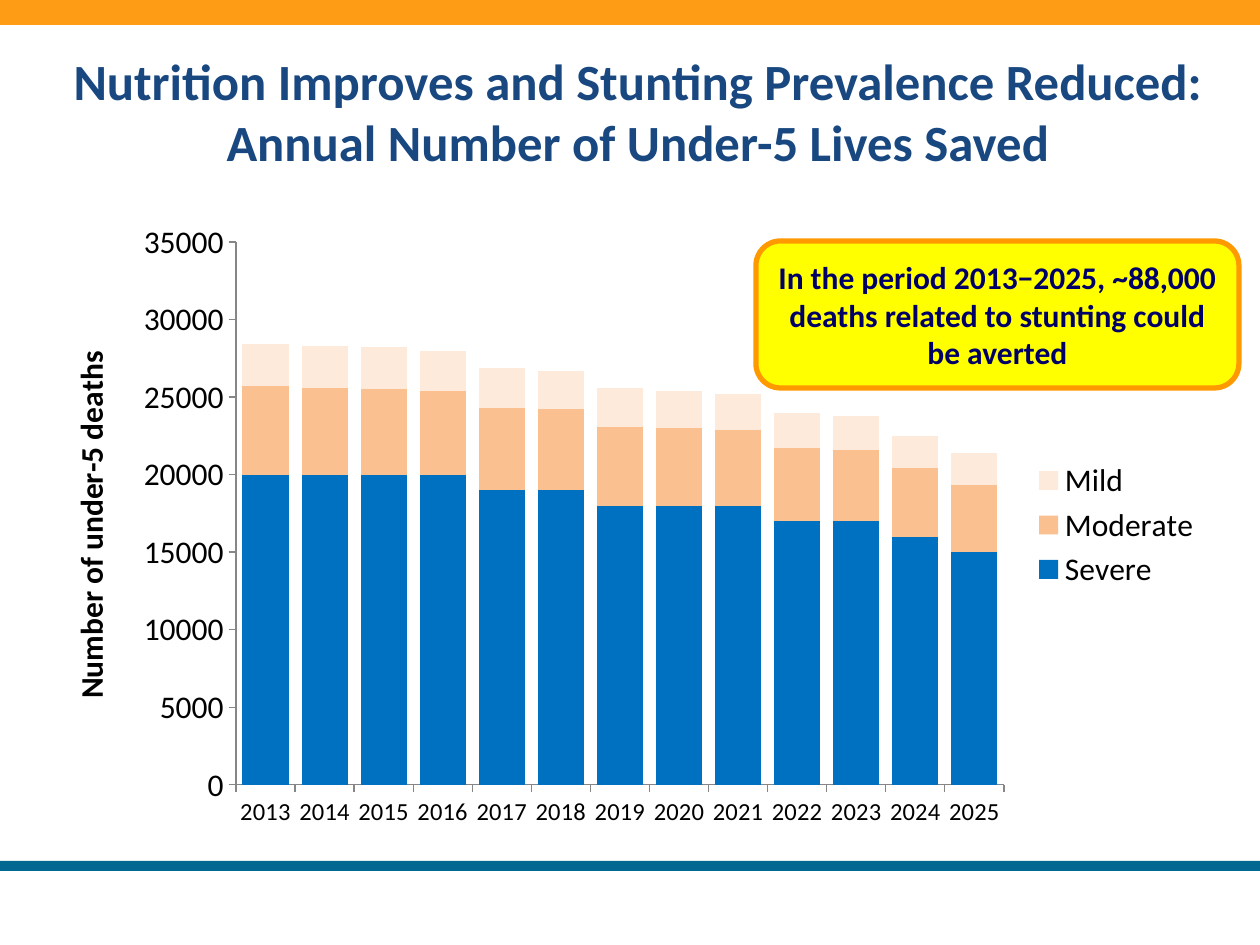
from lxml.etree import SubElement
from pptx import Presentation
from pptx.chart.data import CategoryChartData
from pptx.dml.color import RGBColor
from pptx.enum.chart import XL_CHART_TYPE, XL_LEGEND_POSITION, XL_TICK_MARK
from pptx.enum.shapes import MSO_SHAPE
from pptx.enum.text import MSO_ANCHOR, MSO_AUTO_SIZE, PP_ALIGN
from pptx.oxml.ns import qn
from pptx.util import Pt

PX = 914400 // 126
FONT = "Calibri"
BLACK = RGBColor(0x00, 0x00, 0x00)
GREY = RGBColor(0x86, 0x86, 0x86)
ORANGE = RGBColor(0xFF, 0x9C, 0x16)
TEAL = RGBColor(0x00, 0x68, 0x91)
TITLE_BLUE = RGBColor(0x19, 0x48, 0x81)
YELLOW = RGBColor(0xFF, 0xFF, 0x00)
CALLOUT_EDGE = RGBColor(0xFF, 0x99, 0x00)
NAVY = RGBColor(0x00, 0x00, 0x66)

YEARS = [str(year) for year in range(2013, 2026)]
# Deaths to two significant digits, as on the value axis.
DEATHS = {
    "Severe": (RGBColor(0x00, 0x70, 0xC0),
               [20000, 20000, 20000, 20000, 19000, 19000, 18000,
                18000, 18000, 17000, 17000, 16000, 15000]),
    "Moderate": (RGBColor(0xFA, 0xC0, 0x90),
                 [5700, 5600, 5500, 5400, 5300, 5200, 5100,
                  5000, 4900, 4700, 4600, 4400, 4300]),
    "Mild": (RGBColor(0xFD, 0xEA, 0xDA),
             [2700, 2700, 2700, 2600, 2600, 2500, 2500,
              2400, 2300, 2300, 2200, 2100, 2100]),
}


def emu(box):
    return [n * PX for n in box]


def set_font(font, size, color=BLACK, bold=False):
    font.name, font.size, font.bold = FONT, Pt(size), bold
    font.color.rgb = color


def write(tf, text, size, color=BLACK, bold=True, anchor=MSO_ANCHOR.MIDDLE):
    tf.word_wrap = True
    tf.auto_size = MSO_AUTO_SIZE.NONE
    tf.vertical_anchor = anchor
    p = tf.paragraphs[0]
    p.alignment = PP_ALIGN.CENTER
    r = p.add_run()
    r.text = text
    set_font(r.font, size, color, bold)


def add_box(slide, shape_type, box, fill, line=None, width=0):
    sp = slide.shapes.add_shape(shape_type, *emu(box))
    sp.shadow.inherit = False
    sp.fill.solid()
    sp.fill.fore_color.rgb = fill
    if line is None:
        sp.line.fill.background()
    else:
        sp.line.color.rgb = line
        sp.line.width = Pt(width)
    return sp


def add_title(slide, box, text):
    title = slide.shapes.title
    title.left, title.top, title.width, title.height = emu(box)
    write(title.text_frame, text, 29, TITLE_BLUE, anchor=MSO_ANCHOR.BOTTOM)


def set_plot_area(chart, chart_size, box):
    """Fix the inner plot area to a box within the chart."""
    area = chart.element.chart.plotArea
    old = area.find(qn("c:layout"))
    if old is not None:
        area.remove(old)
    layout = SubElement(area, qn("c:layout"))
    area.insert(0, layout)
    manual = SubElement(layout, qn("c:manualLayout"))
    settings = {"layoutTarget": "inner", "xMode": "edge", "yMode": "edge"}
    for name, length, whole in zip("xywh", box, chart_size * 2):
        settings[name] = length / whole
    for name, value in settings.items():
        SubElement(manual, qn(f"c:{name}")).set("val", str(value))


def format_axis(axis, size):
    axis.has_major_gridlines = False
    axis.major_tick_mark = XL_TICK_MARK.OUTSIDE
    axis.minor_tick_mark = XL_TICK_MARK.NONE
    axis.format.line.color.rgb = GREY
    set_font(axis.tick_labels.font, size)


def add_deaths_chart(slide, box):
    data = CategoryChartData(number_format="0")
    data.categories = YEARS
    for name, (_, values) in DEATHS.items():
        data.add_series(name, values)
    chart = slide.shapes.add_chart(
        XL_CHART_TYPE.COLUMN_STACKED, *emu(box), data).chart
    chart.has_title = False
    set_font(chart.font, 18)
    set_plot_area(chart, box[2:], (194, 32, 768, 543))

    plot = chart.plots[0]
    plot.gap_width, plot.overlap = 28, 100
    plot.vary_by_categories = False
    for series, (color, _) in zip(plot.series, DEATHS.values()):
        series.format.fill.solid()
        series.format.fill.fore_color.rgb = color

    format_axis(chart.category_axis, 14)
    values = chart.value_axis
    format_axis(values, 18)
    values.minimum_scale, values.maximum_scale = 0, 35000
    values.major_unit = 5000
    r = values.axis_title.text_frame.paragraphs[0].add_run()
    r.text = "Number of under-5 deaths"
    set_font(r.font, 18, bold=True)

    chart.has_legend = True
    chart.legend.position = XL_LEGEND_POSITION.RIGHT
    chart.legend.include_in_layout = False
    set_font(chart.legend.font, 18)


def add_callout(slide, box, text):
    sp = add_box(slide, MSO_SHAPE.ROUNDED_RECTANGLE, box, YELLOW,
                 CALLOUT_EDGE, 3)
    write(sp.text_frame, text, 18, NAVY)


def main():
    prs = Presentation()
    prs.slide_width, prs.slide_height = emu((1260, 945))
    slide = prs.slides.add_slide(prs.slide_layouts[5])
    add_box(slide, MSO_SHAPE.RECTANGLE, (0, 861, 1260, 10), TEAL)
    add_box(slide, MSO_SHAPE.RECTANGLE, (0, 0, 1260, 25), ORANGE)
    add_title(slide, (21, 21, 1235, 157),
              "Nutrition Improves and Stunting Prevalence Reduced: "
              "Annual Number of Under-5 Lives Saved")
    add_deaths_chart(slide, (42, 210, 1172, 630))
    add_callout(slide, (756, 241, 483, 147),
                "In the period 2013−2025, ~88,000 deaths related to "
                "stunting could be averted")
    prs.save("out.pptx")


if __name__ == "__main__":
    main()
